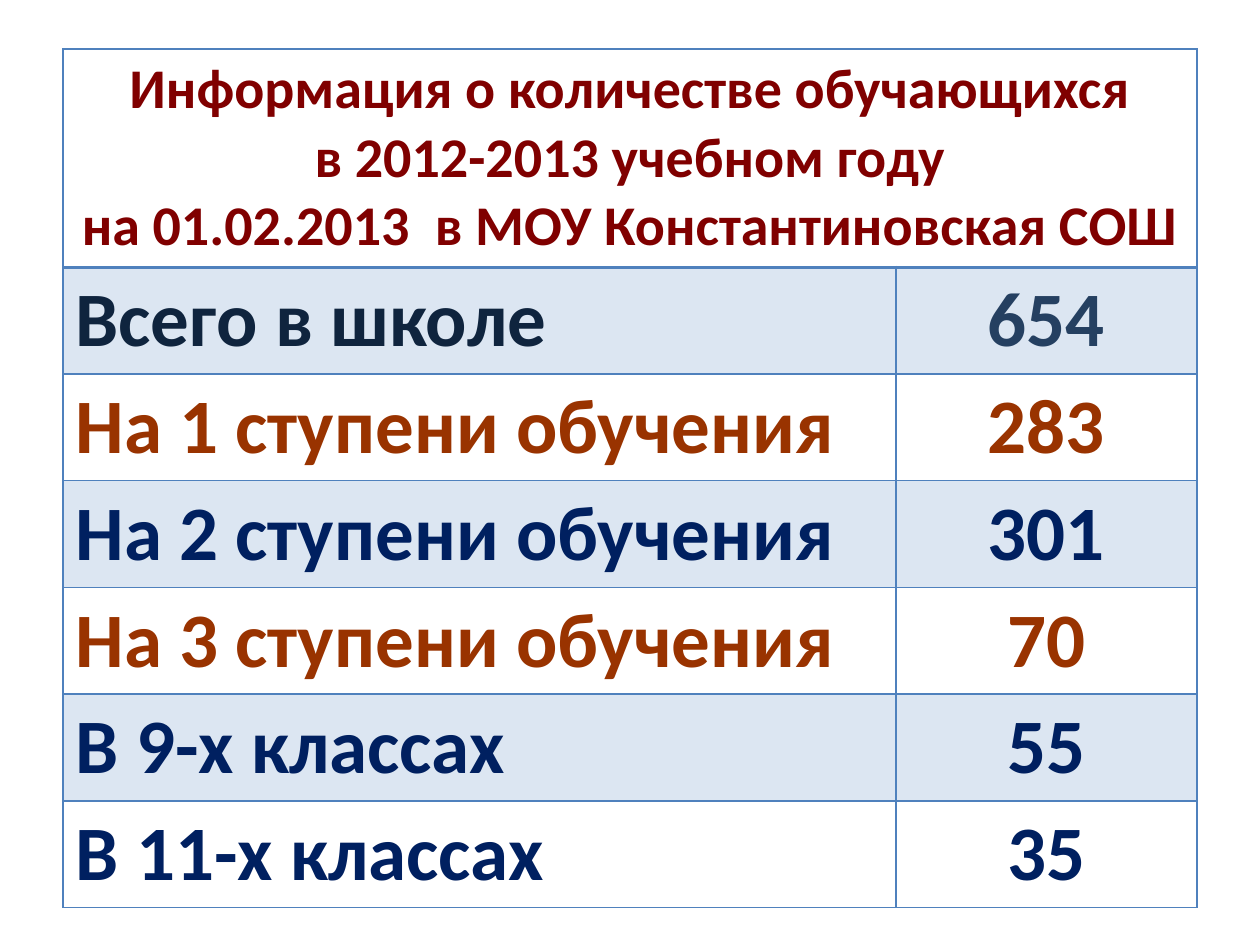
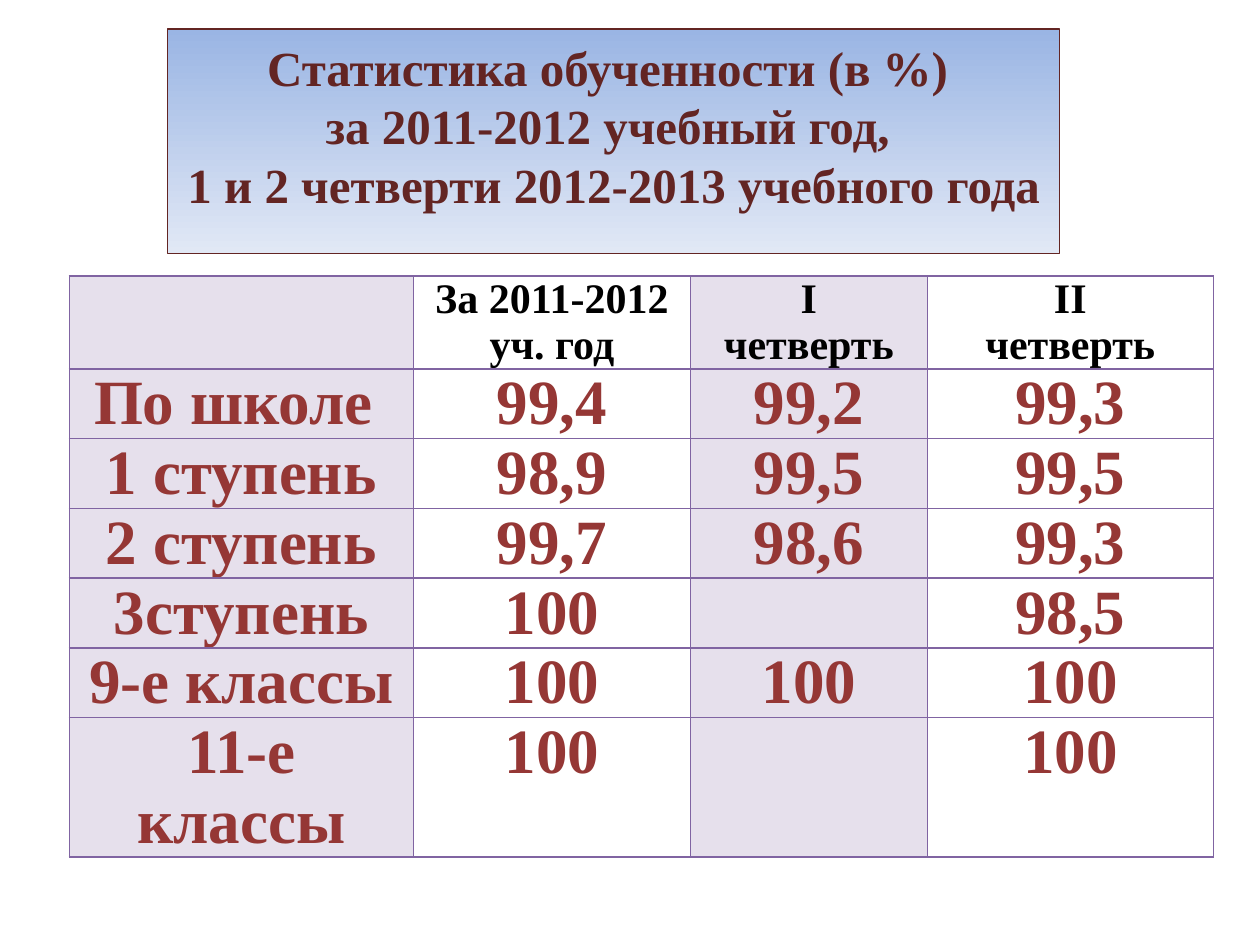
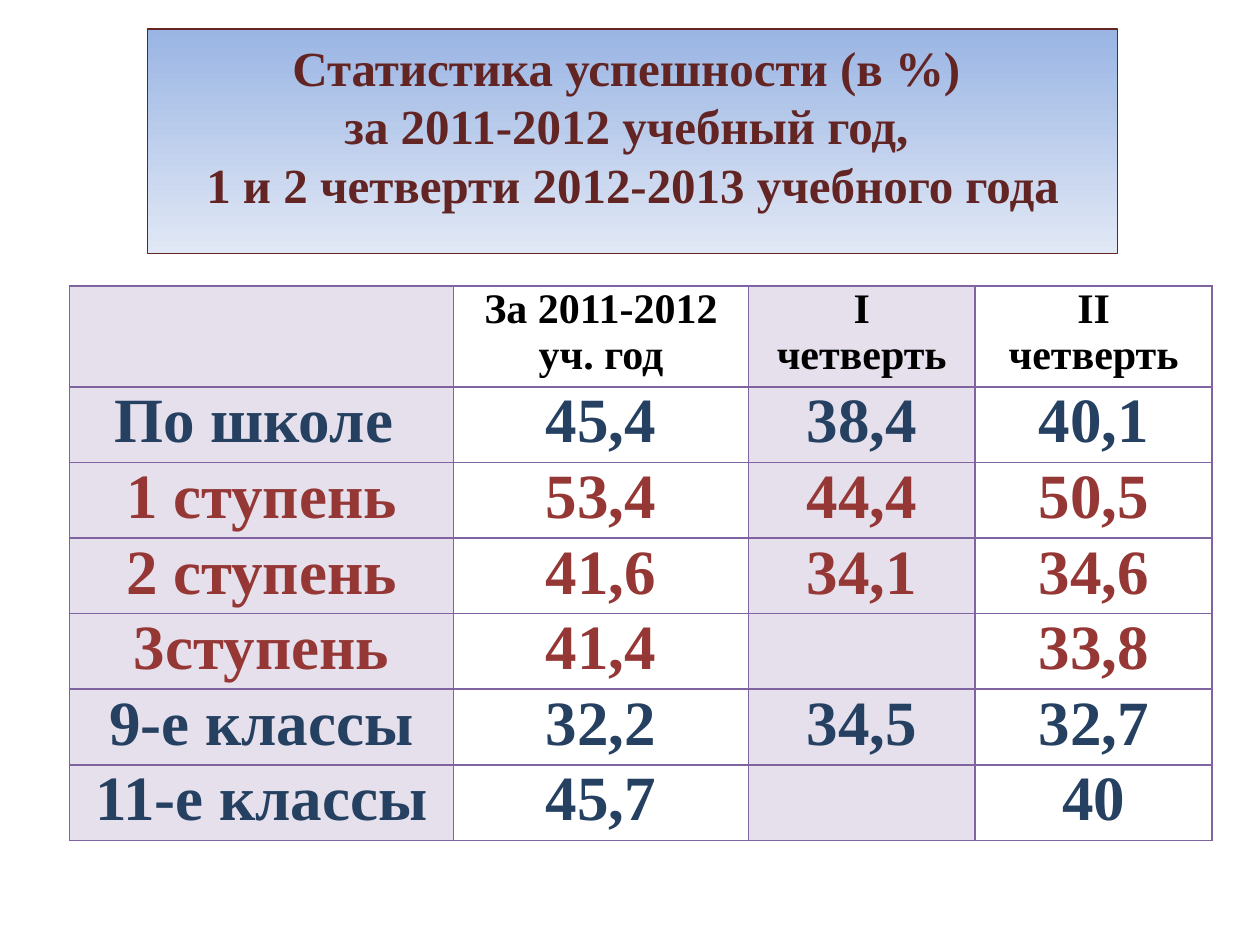
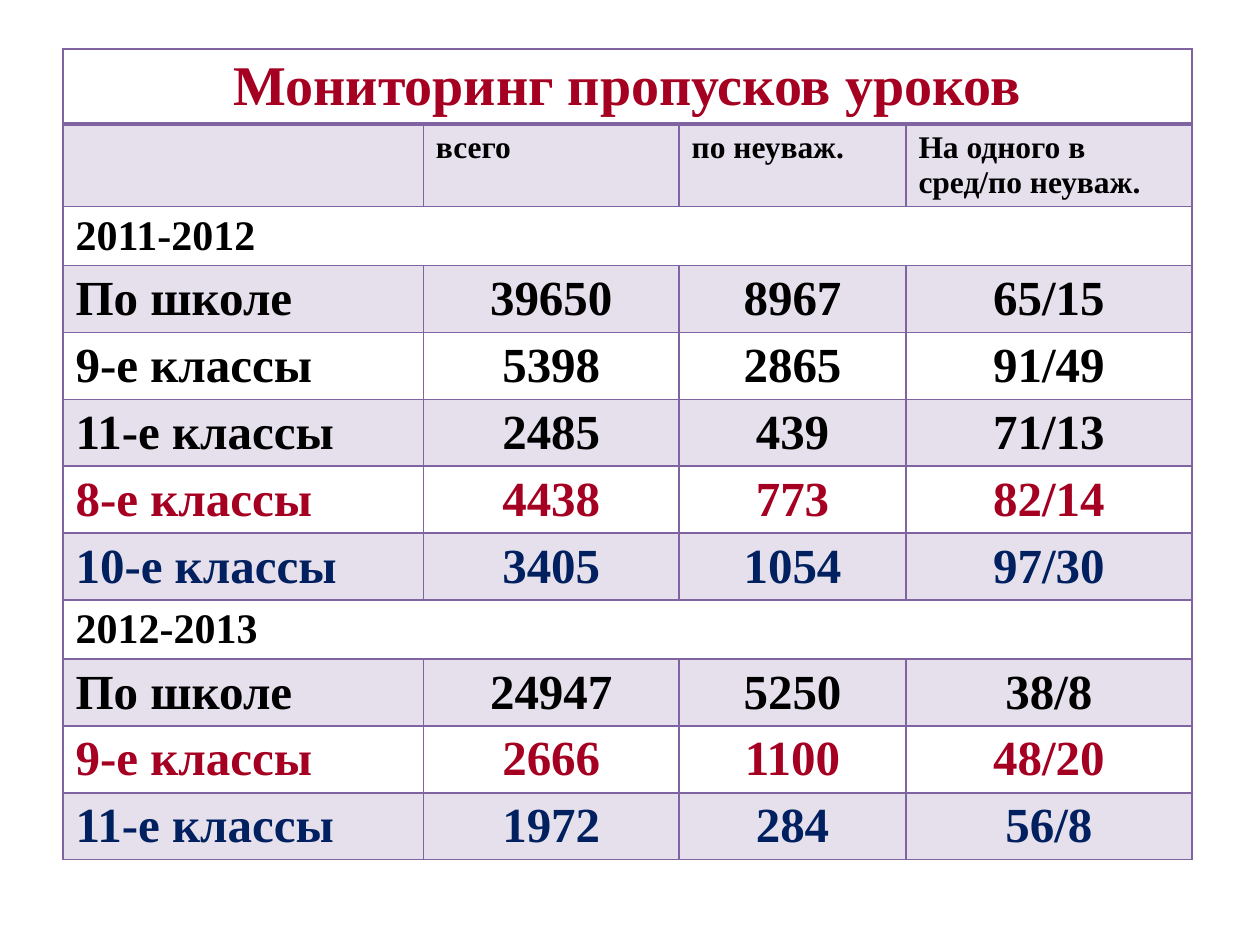
"""Build four slides of school statistics: enrolment, attainment, success and missed lessons."""
from lxml import etree
from pptx import Presentation
from pptx import util as u
from pptx.dml.color import RGBColor
from pptx.enum import shapes, text
from pptx.oxml import ns

COLORS = {
    "blue": "4F81BD", "blue_tint": "DCE6F2", "violet": "8064A2", "violet_tint": "E6E0EC",
    "maroon": "800000", "ink": "0F243E", "steel": "254061", "rust": "993300",
    "navy": "002060", "black": "000000", "brick": "953735", "crimson": "A50021",
    "wine": "632523", "sky": "9AB5E4", "mist": "E1E8F5",
}
RGB = {name: RGBColor.from_string(value) for name, value in COLORS.items()}
SERIF = "Times New Roman"
CENTER, LEFT = text.PP_ALIGN.CENTER, text.PP_ALIGN.LEFT


def style(tf, font, size, color, align):
    for p in tf.paragraphs:
        p.alignment = align
        for r in p.runs:
            r.font.name, r.font.size, r.font.bold = font, u.Pt(size), True
            r.font.color.rgb = RGB[color]


def add_table(s, left, top, widths, rows, font, accent, by_column=False):
    """Each row is (height, size, colours, cells); a single cell spans the whole row."""
    table = s.shapes.add_table(len(rows), len(widths), u.Inches(left), u.Inches(top),
                               u.Inches(sum(widths)), u.Inches(sum(row[0] for row in rows))).table
    table.first_row = table.horz_banding = False
    for col, width in zip(table.columns, widths):
        col.width = u.Inches(width)
    for i, (height, size, colors, cells) in enumerate(rows):
        table.rows[i].height = u.Inches(height)
        if len(cells) == 1:
            table.cell(i, 0).merge(table.cell(i, len(widths) - 1))
        for j in range(len(widths)):
            cell = table.cell(i, j)
            if j < len(cells):
                cell.text = cells[j]
                centered = by_column or i == 0 or (j > 0 and size > 18)
                style(cell.text_frame, font, size, colors[min(j, len(colors) - 1)],
                      CENTER if centered else LEFT)
            if by_column:
                cell.margin_left = cell.margin_right = u.Inches(0.07)
                cell.margin_top = cell.margin_bottom = 0
            if (j % 2 == 0) if by_column else (i % 2 == 1):
                cell.fill.solid()
                cell.fill.fore_color.rgb = RGB[accent + "_tint"]
            else:
                cell.fill.background()
            tcPr = cell._tc.get_or_add_tcPr()
            for k, side in enumerate(("lnL", "lnR", "lnT", "lnB")):
                heavy = not by_column and (i, side) in ((0, "lnB"), (1, "lnT"))
                ln = etree.Element(ns.qn("a:" + side), w=str(u.Pt(2 if heavy else 1)))
                fill = etree.SubElement(ln, ns.qn("a:solidFill"))
                etree.SubElement(fill, ns.qn("a:srgbClr"), val=COLORS[accent])
                tcPr.insert(k, ln)


prs = Presentation()
prs.slide_width, prs.slide_height = u.Inches(10), u.Inches(7.5)
blank = prs.slide_layouts[6]

enrolment = [
    (("ink", "steel"), "Всего в школе", "654"),
    (("rust",), "На 1 ступени обучения", "283"),
    (("navy",), "На 2 ступени обучения", "301"),
    (("rust",), "На 3 ступени обучения", "70"),
    (("navy",), "В 9-х классах", "55"),
    (("navy",), "В 11-х классах", "35"),
]
heading = ("Информация о количестве обучающихся\n в 2012-2013 учебном году \n"
           "на 01.02.2013  в МОУ Константиновская СОШ")
rows = [(1.72, 32, ("maroon",), [heading])]
rows += [(0.84, 44, colors, cells) for colors, *cells in enrolment]
add_table(prs.slides.add_slide(blank), 0.5, 0.39, [6.61, 2.39], rows, "Calibri", "blue")

header = ["", "За 2011-2012 уч. год", "I\nчетверть", "II\nчетверть"]
groups = ["По школе ", "1 ступень", "2 ступень", "3ступень", "9-е классы", "11-е классы"]
statistics = [
    ("обученности", 1.33, 7.08, 2.19, [2.73, 2.2, 1.88, 2.27],
     [0.73] + [0.55] * 5 + [1.1], ["brick"] * 6,
     [("99,4", "99,2", "99,3"), ("98,9", "99,5", "99,5"), ("99,7", "98,6", "99,3"),
      ("100", "", "98,5"), ("100", "100", "100"), ("100", "", "100")]),
    ("успешности", 1.17, 7.7, 2.27, [3.05, 2.34, 1.8, 1.88],
     [0.8] + [0.6] * 6, ["steel"] + ["brick"] * 3 + ["steel"] * 2,
     [("45,4", "38,4", "40,1"), ("53,4", "44,4", "50,5"), ("41,6", "34,1", "34,6"),
      ("41,4", "", "33,8"), ("32,2", "34,5", "32,7"), ("45,7", "", "40")]),
]
for topic, left, width, top, widths, heights, colors, values in statistics:
    s = prs.slides.add_slide(blank)
    sp = s.shapes.add_shape(shapes.MSO_SHAPE.RECTANGLE, u.Inches(left), u.Inches(0.23),
                            u.Inches(width), u.Inches(1.78))
    sp.shadow.inherit = False
    sp.fill.gradient()
    sp.fill.gradient_angle = 270
    for stop, color in zip(sp.fill.gradient_stops, ("sky", "mist")):
        stop.color.rgb = RGB[color]
    sp.line.color.rgb = RGB["wine"]
    sp.line.width = u.Pt(0.75)
    tf = sp.text_frame
    tf.text = (f"Статистика {topic} (в %) \nза 2011-2012 учебный год, \n"
               "1 и 2 четверти 2012-2013 учебного года")
    tf.word_wrap = True
    tf.vertical_anchor = text.MSO_ANCHOR.MIDDLE
    tf.margin_bottom = u.Inches(0.3)
    style(tf, SERIF, 28, "wine", CENTER)
    for p in tf.paragraphs:
        p.line_spacing = u.Pt(33.7)
    rows = [(heights[0], 24, ("black",), header)]
    rows += [(height, 36, (color,), [group, *marks])
             for height, color, group, marks in zip(heights[1:], colors, groups, values)]
    add_table(s, 0.55, top, widths, rows, SERIF, "violet", by_column=True)

absences = {
    "2011-2012": [
        ("black", "По школе", "39650", "8967", "65/15"),
        ("black", "9-е классы", "5398", "2865", "91/49"),
        ("black", "11-е классы", "2485", "439", "71/13"),
        ("crimson", "8-е классы", "4438", "773", "82/14"),
        ("navy", "10-е классы", "3405", "1054", "97/30"),
    ],
    "2012-2013": [
        ("black", "По школе", "24947", "5250", "38/8"),
        ("crimson", "9-е классы", "2666", "1100", "48/20"),
        ("navy", "11-е классы", "1972", "284", "56/8"),
    ],
}
rows = [(0.59, 32, ("crimson",), ["Мониторинг пропусков уроков"]),
        (0.65, 18, ("black",), ["", "всего", "по неуваж.", "На одного в сред/по неуваж."])]
for year, classes in absences.items():
    rows.append((0.47, 24, ("black",), [year]))
    rows += [(0.53, 28, (color,), cells) for color, *cells in classes]
add_table(prs.slides.add_slide(blank), 0.5, 0.39, [2.86, 2.03, 1.8, 2.27], rows, SERIF, "violet")

prs.save("out.pptx")
